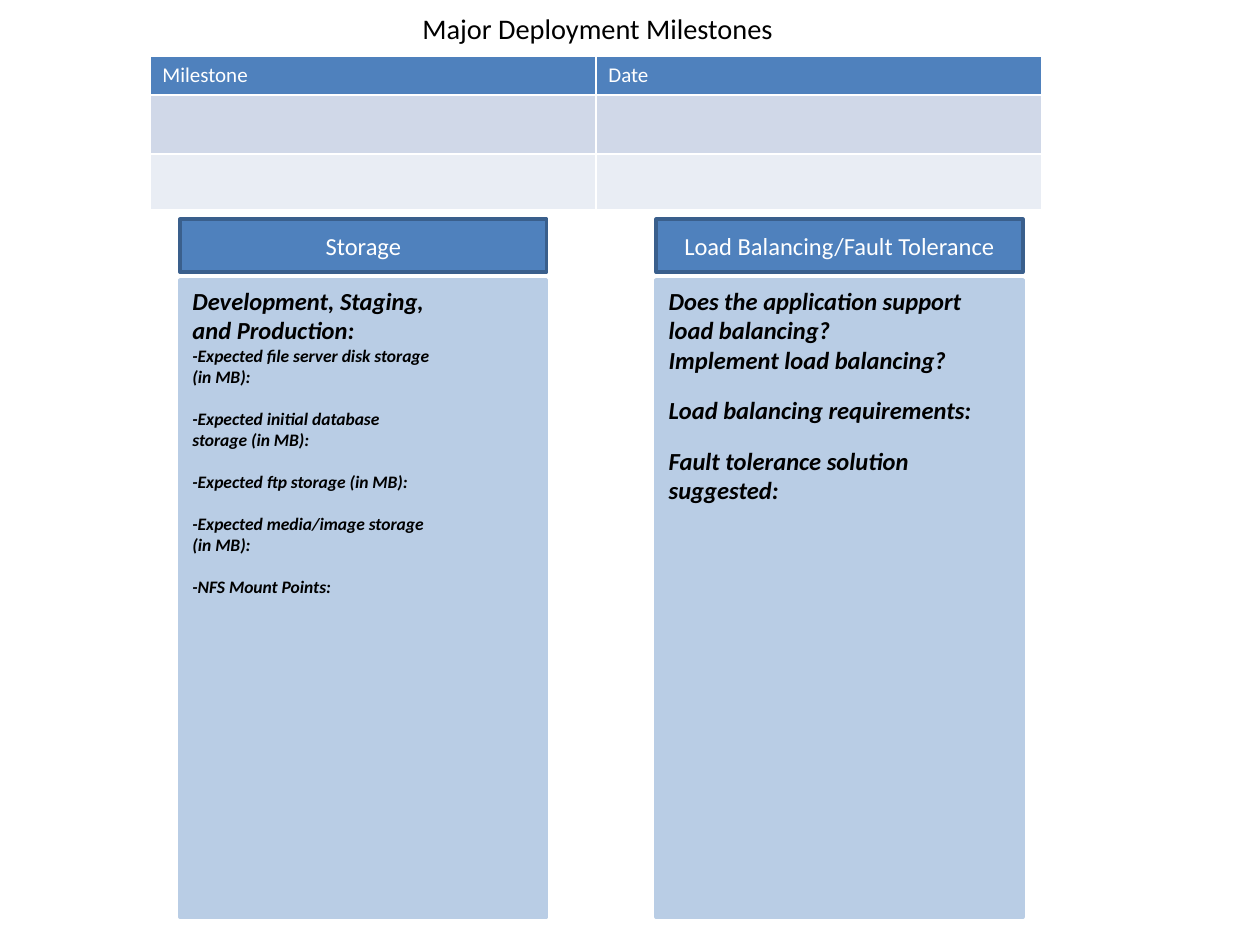
from pptx import Presentation
from pptx.dml.color import RGBColor
from pptx.enum.shapes import MSO_SHAPE
from pptx.enum.text import MSO_ANCHOR, MSO_AUTO_SIZE, PP_ALIGN
from pptx.util import Cm, Pt

RECTANGLE = MSO_SHAPE.RECTANGLE
MIDDLE = MSO_ANCHOR.MIDDLE
LEFT, CENTER = PP_ALIGN.LEFT, PP_ALIGN.CENTER
FIT_SHAPE, NO_FIT = MSO_AUTO_SIZE.SHAPE_TO_FIT_TEXT, MSO_AUTO_SIZE.NONE

TITLE_ONLY = 5
BLUE, DARK_BLUE, PALE_BLUE = "4F81BD", "3A5F8C", "B9CDE5"
ROW_FILLS = [BLUE, "D0D8E8", "E9EDF4"]
ROW_HEIGHTS = [0.75, 1.19, 1.12]
WHITE, BLACK = "FFFFFF", "000000"

PANEL_TOP, PANEL_WIDTH = 4.42, 7.39
HEADER_HEIGHT, BODY_OFFSET, BODY_HEIGHT = 1.07, 1.22, 12.85

STORAGE_LINES = [
    ("Development, Staging, and Production:", 14, 0),
    ("-Expected file server disk storage (in MB):", 10, 0),
    ("-Expected initial database storage (in MB):", 10, 12),
    ("-Expected ftp storage (in MB):", 10, 12),
    ("-Expected media/image storage (in MB):", 10, 12),
    ("-NFS Mount Points:", 10, 12),
]
BALANCING_LINES = [
    ("Does the application support load balancing?", 14, 0),
    ("Implement load balancing?", 14, 0),
    ("Load balancing requirements:", 14, 12),
    ("Fault tolerance solution suggested:", 14, 12),
]


def color(value):
    return RGBColor.from_string(value)


def format_paragraph(paragraph, size, font_color, emphasis=False, alignment=LEFT):
    paragraph.alignment = alignment
    for run in paragraph.runs:
        run.font.name = "Calibri"
        run.font.size = Pt(size)
        run.font.bold = run.font.italic = emphasis
        run.font.color.rgb = color(font_color)


def add_title(slide, left, top, width, height):
    title = slide.shapes.title
    title.left, title.top = Cm(left), Cm(top)
    title.width, title.height = Cm(width), Cm(height)
    text_frame = title.text_frame
    text_frame.text = "Major Deployment Milestones"
    text_frame.auto_size = NO_FIT
    text_frame.vertical_anchor = MIDDLE
    format_paragraph(text_frame.paragraphs[0], 16.2, BLACK)


def add_milestone_table(slide, left, top, width):
    frame = slide.shapes.add_table(
        len(ROW_HEIGHTS), 2, Cm(left), Cm(top), Cm(width), Cm(sum(ROW_HEIGHTS))
    )
    table = frame.table
    for row, height, fill in zip(table.rows, ROW_HEIGHTS, ROW_FILLS):
        row.height = Cm(height)
        for cell in row.cells:
            cell.fill.solid()
            cell.fill.fore_color.rgb = color(fill)
    for cell, heading in zip(table.rows[0].cells, ["Milestone", "Date"]):
        cell.text_frame.text = heading
        format_paragraph(cell.text_frame.paragraphs[0], 12, WHITE)


def add_rectangle(slide, left, top, width, height, fill, line):
    shape = slide.shapes.add_shape(RECTANGLE, Cm(left), Cm(top), Cm(width), Cm(height))
    shape.shadow.inherit = False
    shape.fill.solid()
    shape.fill.fore_color.rgb = color(fill)
    shape.line.color.rgb = color(line)
    shape.line.width = Pt(2)
    return shape


def add_panel(slide, left, top, heading, lines, text_width, text_height):
    body_top = top + BODY_OFFSET
    add_rectangle(slide, left, body_top, PANEL_WIDTH, BODY_HEIGHT, PALE_BLUE, PALE_BLUE)

    header = add_rectangle(slide, left, top, PANEL_WIDTH, HEADER_HEIGHT, BLUE, DARK_BLUE)
    header.text_frame.text = heading
    header.text_frame.word_wrap = True
    header.text_frame.vertical_anchor = MIDDLE
    format_paragraph(header.text_frame.paragraphs[0], 14, WHITE, alignment=CENTER)

    text_box = slide.shapes.add_textbox(
        Cm(left), Cm(body_top), Cm(text_width), Cm(text_height)
    )
    text_frame = text_box.text_frame
    text_frame.text = "\n".join(text for text, _, _ in lines)
    text_frame.word_wrap = True
    text_frame.auto_size = FIT_SHAPE
    for paragraph, (_, size, gap) in zip(text_frame.paragraphs, lines):
        paragraph.space_before = Pt(gap)
        format_paragraph(paragraph, size, BLACK, emphasis=True)


def main():
    presentation = Presentation()
    presentation.slide_width, presentation.slide_height = Cm(25.4), Cm(19.05)
    slide = presentation.slides.add_slide(presentation.slide_layouts[TITLE_ONLY])
    add_title(slide, 8.26, 0.08, 7.7, 0.97)
    add_milestone_table(slide, 3.02, 1.14, 17.98)
    add_panel(slide, 3.63, PANEL_TOP, "Storage", STORAGE_LINES, 5.36, 6.58)
    add_panel(
        slide, 13.23, PANEL_TOP, "Load Balancing/Fault Tolerance",
        BALANCING_LINES, PANEL_WIDTH, 4.7,
    )
    presentation.save("out.pptx")


if __name__ == "__main__":
    main()
